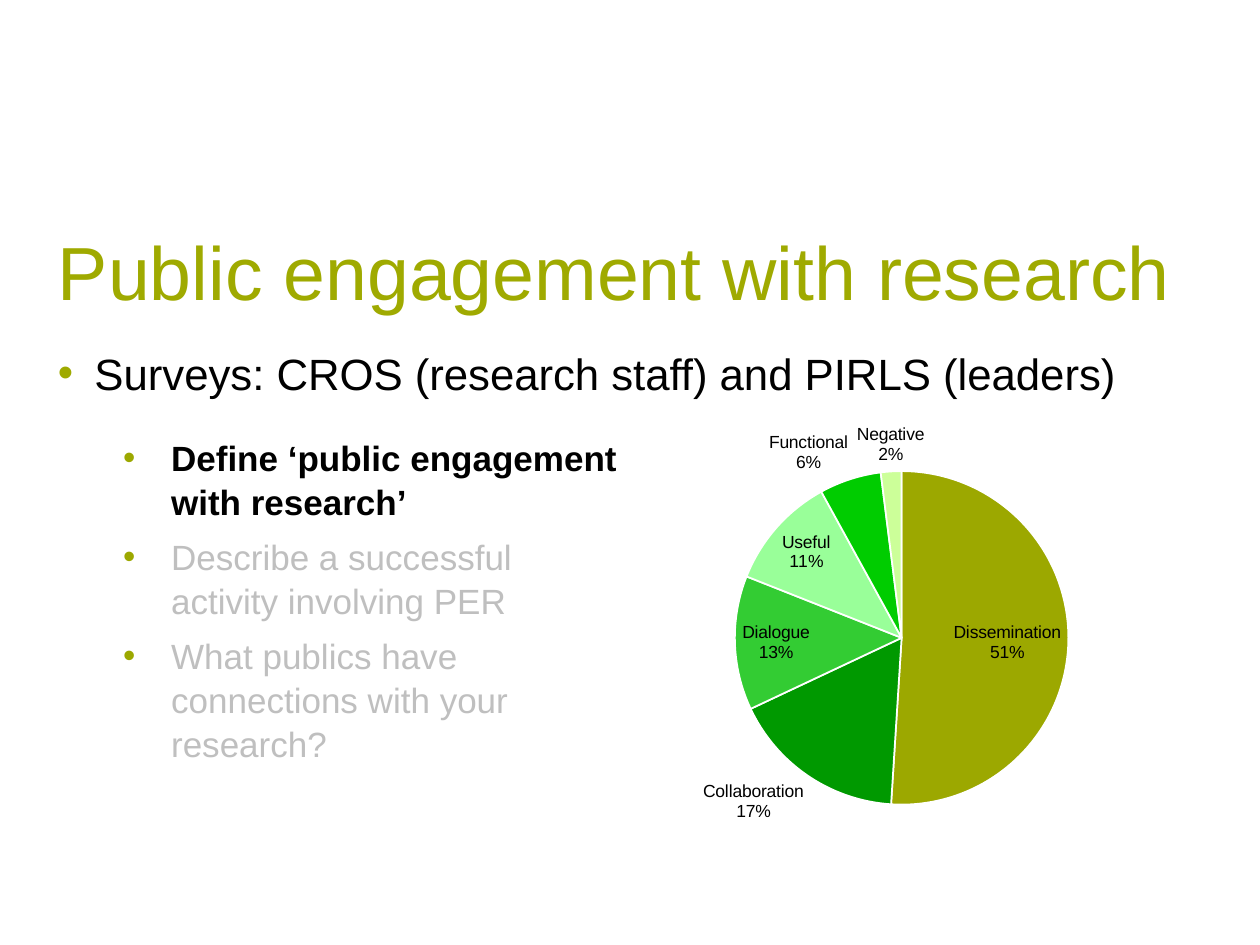
from lxml import etree
from pptx import Presentation
from pptx.chart.data import CategoryChartData
from pptx.dml.color import RGBColor
from pptx.enum.chart import XL_CHART_TYPE, XL_LABEL_POSITION
from pptx.enum.text import MSO_ANCHOR
from pptx.oxml.ns import qn
from pptx.util import Inches, Pt

FONT = "Arial"
TITLE_GREEN = "9FAA00"
OLIVE = "9CA800"
BLACK = "000000"
GREY = "BFBFBF"
WHITE = "FFFFFF"

INSIDE = XL_LABEL_POSITION.INSIDE_END
OUTSIDE = XL_LABEL_POSITION.OUTSIDE_END

# Category, percentage, colour, label position
DEFINITIONS = [
    ("Dissemination", 51, OLIVE, INSIDE),
    ("Collaboration", 17, "009900", OUTSIDE),
    ("Dialogue", 13, "33CC33", INSIDE),
    ("Useful", 11, "99FF99", INSIDE),
    ("Functional", 6, "00CC00", OUTSIDE),
    ("Negative", 2, "CCFF99", OUTSIDE),
]

QUESTIONS = [
    ("Define ‘public engagement with research’", BLACK, True),
    ("Describe a successful activity involving PER", GREY, False),
    ("What publics have connections with your research?", GREY, False),
]


def rgb(color):
    return RGBColor.from_string(color)


def add_text_frame(slide, box, side_inset, top_inset):
    shape = slide.shapes.add_textbox(*map(Inches, box))
    frame = shape.text_frame
    frame.word_wrap = True
    frame.margin_left = frame.margin_right = Inches(side_inset)
    frame.margin_top = frame.margin_bottom = Inches(top_inset)
    return frame


def add_run(paragraph, text, size, color, bold=False):
    run = paragraph.add_run()
    run.text = text
    run.font.name = FONT
    run.font.size = Pt(size)
    run.font.bold = bold
    run.font.color.rgb = rgb(color)


def set_bullet(paragraph, color, margin, hanging):
    properties = paragraph._p.get_or_add_pPr()
    properties.set("marL", str(Inches(margin)))
    properties.set("indent", str(-Inches(hanging)))
    bullet_color = etree.SubElement(properties, qn("a:buClr"))
    etree.SubElement(bullet_color, qn("a:srgbClr"), val=color)
    etree.SubElement(properties, qn("a:buFont"), typeface=FONT)
    etree.SubElement(properties, qn("a:buChar"), char="•")


def add_title(slide, box):
    frame = add_text_frame(slide, box, 0.08, 0.04)
    frame.vertical_anchor = MSO_ANCHOR.MIDDLE
    add_run(frame.paragraphs[0], "Public engagement with research", 43, TITLE_GREEN)


def add_survey_line(slide, box):
    paragraph = add_text_frame(slide, box, 0.08, 0.04).paragraphs[0]
    set_bullet(paragraph, TITLE_GREEN, 0.29, 0.29)
    add_run(paragraph, "Surveys: CROS (research staff) and PIRLS (leaders)", 25, BLACK)


def add_questions(slide, box):
    frame = add_text_frame(slide, box, 0.1, 0.05)
    for index, (text, color, bold) in enumerate(QUESTIONS):
        paragraph = frame.add_paragraph() if index else frame.paragraphs[0]
        paragraph.level = 1
        set_bullet(paragraph, OLIVE, 0.88, 0.38)
        paragraph.line_spacing = 1.05
        paragraph.space_after = Pt(6)
        add_run(paragraph, text, 20, color, bold)


def show_category_and_percent(labels):
    """Set the content flags on a c:dLbls or c:dLbl element."""
    for name, value in (("showVal", "0"), ("showCatName", "1"), ("showPercent", "1")):
        labels.find(qn(f"c:{name}")).set("val", value)
    separator = etree.Element(qn("c:separator"))
    separator.text = "\n"
    flags = [labels.find(qn(f"c:{name}")) for name in ("showBubbleSize", "showPercent")]
    next(flag for flag in flags if flag is not None).addnext(separator)


def place_pie(chart, x, y, width, height):
    """Fix the plot area, in fractions of the chart frame."""
    plot_area = chart._chartSpace.chart.plotArea
    layout = plot_area.find(qn("c:layout"))
    if layout is None:
        layout = etree.Element(qn("c:layout"))
        plot_area.insert(0, layout)
    manual = etree.SubElement(layout, qn("c:manualLayout"))
    settings = [("layoutTarget", "inner"), ("xMode", "edge"), ("yMode", "edge"),
                ("x", x), ("y", y), ("w", width), ("h", height)]
    for name, value in settings:
        etree.SubElement(manual, qn(f"c:{name}"), val=str(value))


def add_definition_pie(slide, box):
    data = CategoryChartData()
    data.categories = [name for name, *_ in DEFINITIONS]
    data.add_series("Series 1", [value for _, value, *_ in DEFINITIONS])
    chart = slide.shapes.add_chart(XL_CHART_TYPE.PIE, *map(Inches, box), data).chart
    chart.has_title = False
    chart.has_legend = False
    chart.font.name = FONT
    chart.font.size = Pt(10)
    chart.font.color.rgb = rgb(BLACK)
    place_pie(chart, 0.34, 0.15, 0.42, 0.75)

    plot = chart.plots[0]
    plot.vary_by_categories = True
    series = plot.series[0]
    series.data_labels.show_percentage = True
    for index, (_, _, color, position) in enumerate(DEFINITIONS):
        point = series.points[index]
        point.format.fill.solid()
        point.format.fill.fore_color.rgb = rgb(color)
        point.format.line.color.rgb = rgb(WHITE)
        point.format.line.width = Pt(1)
        point.data_label.position = position
    labels = series.data_labels._element
    for element in [labels, *labels.findall(qn("c:dLbl"))]:
        show_category_and_percent(element)


def main():
    presentation = Presentation()
    presentation.slide_width = Inches(10)
    presentation.slide_height = Inches(7.5)
    slide = presentation.slides.add_slide(presentation.slide_layouts[6])
    add_title(slide, (0.38, 1.75, 9, 0.8))
    add_survey_line(slide, (0.38, 2.71, 9, 0.5))
    add_questions(slide, (0.38, 3.4, 4.66, 2.63))
    add_definition_pie(slide, (3.68, 3.21, 6.32, 3.53))
    presentation.save("out.pptx")


if __name__ == "__main__":
    main()
